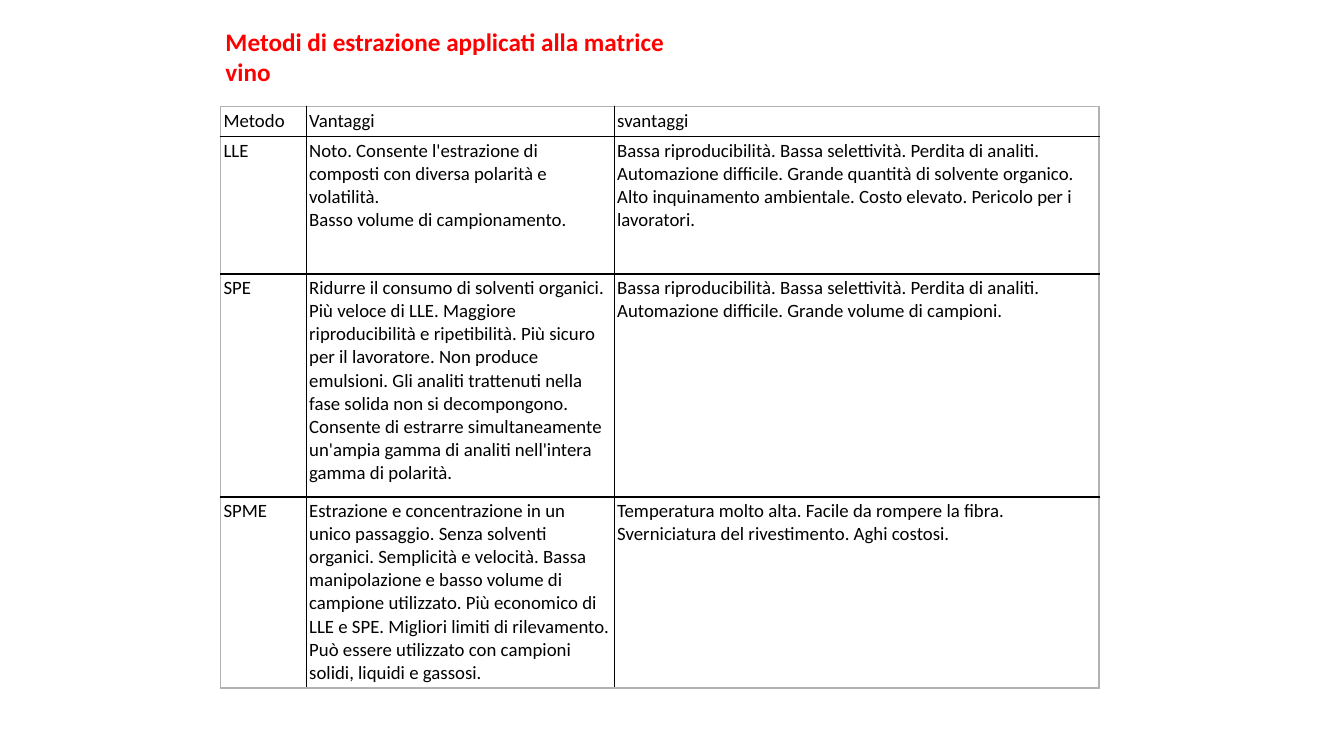
"""Build a slide comparing extraction methods for wine."""
from lxml import etree
from pptx import Presentation
from pptx.dml.color import RGBColor
from pptx.enum.text import MSO_ANCHOR
from pptx.oxml.ns import qn
from pptx.util import Pt

TITLE = "Metodi di estrazione applicati alla matrice vino"
ROWS = [
    ("Metodo", "Vantaggi", "svantaggi"),
    ("LLE",
     "Noto. Consente l'estrazione di composti con diversa polarità e volatilità.\n"
     "Basso volume di campionamento.",
     "Bassa riproducibilità. Bassa selettività. Perdita di analiti.\n"
     "Automazione difficile. Grande quantità di solvente organico. Alto inquinamento "
     "ambientale. Costo elevato. Pericolo per i lavoratori."),
    ("SPE",
     "Ridurre il consumo di solventi organici. Più veloce di LLE. Maggiore riproducibilità "
     "e ripetibilità. Più sicuro per il lavoratore. Non produce emulsioni. Gli analiti "
     "trattenuti nella fase solida non si decompongono. Consente di estrarre "
     "simultaneamente un'ampia gamma di analiti nell'intera gamma di polarità.",
     "Bassa riproducibilità. Bassa selettività. Perdita di analiti. Automazione difficile. "
     "Grande volume di campioni."),
    ("SPME",
     "Estrazione e concentrazione in un unico passaggio. Senza solventi organici. "
     "Semplicità e velocità. Bassa manipolazione e basso volume di campione utilizzato. "
     "Più economico di LLE e SPE. Migliori limiti di rilevamento. Può essere utilizzato "
     "con campioni solidi, liquidi e gassosi.",
     "Temperatura molto alta. Facile da rompere la fibra. Sverniciatura del rivestimento. "
     "Aghi costosi."),
]
COLUMN_WIDTHS = [61.2, 220, 346.3]
ROW_HEIGHTS = [21.9, 98, 159.3, 136.5]
LEFT, TITLE_TOP, TABLE_TOP = 157.5, 15.1, 75.8
CELL_INSET, TITLE_INSET = 2.16, 3.6
FONT = "Calibri"
RED = RGBColor(0xFF, 0x00, 0x00)
BLACK = RGBColor(0x00, 0x00, 0x00)
GRAY = RGBColor(0xB2, 0xB2, 0xB2)
TOP = MSO_ANCHOR.TOP


def add_text(paragraph, text, size, color, bold=False):
    """Add runs to a paragraph, with a line break between lines."""
    for index, line in enumerate(text.split("\n")):
        if index:
            paragraph.add_line_break()
        run = paragraph.add_run()
        run.text = line
        run.font.name, run.font.size, run.font.bold = FONT, Pt(size), bold
        run.font.color.rgb = color


def set_insets(target, inset):
    """Give a cell or text frame equal margins."""
    target.margin_left = target.margin_right = Pt(inset)
    target.margin_top = target.margin_bottom = Pt(inset)


def add_border(cell, side, color, width):
    """Draw one side of a cell."""
    properties = cell._tc.get_or_add_tcPr()
    line = etree.SubElement(properties, qn(f"a:ln{side}"), w=str(Pt(width)))
    fill = etree.SubElement(line, qn("a:solidFill"))
    etree.SubElement(fill, qn("a:srgbClr"), val=str(color))


def add_title(slide):
    """Add the red heading."""
    box = slide.shapes.add_textbox(Pt(LEFT), Pt(TITLE_TOP), Pt(347.8), Pt(51))
    frame = box.text_frame
    frame.word_wrap = True
    set_insets(frame, TITLE_INSET)
    add_text(frame.paragraphs[0], TITLE, 18, RED, bold=True)


def add_comparison(slide):
    """Add the table of methods."""
    last_row, last_column = len(ROWS) - 1, len(COLUMN_WIDTHS) - 1
    table = slide.shapes.add_table(
        len(ROWS), len(COLUMN_WIDTHS), Pt(LEFT), Pt(TABLE_TOP),
        Pt(sum(COLUMN_WIDTHS)), Pt(sum(ROW_HEIGHTS))).table
    table.first_row = table.horz_banding = False
    for column, width in zip(table.columns, COLUMN_WIDTHS):
        column.width = Pt(width)
    for row, height in zip(table.rows, ROW_HEIGHTS):
        row.height = Pt(height)
    for i, texts in enumerate(ROWS):
        for j, text in enumerate(texts):
            cell = table.cell(i, j)
            set_insets(cell, CELL_INSET)
            cell.vertical_anchor = TOP
            outer = {"L": j == 0, "R": j == last_column, "T": i == 0, "B": i == last_row}
            for side, is_outer in outer.items():
                add_border(cell, side, GRAY if is_outer else BLACK, 1)
            cell.fill.background()
            add_text(cell.text_frame.paragraphs[0], text, 13.4, BLACK)


def main():
    """Create and save the presentation."""
    presentation = Presentation()
    presentation.slide_width, presentation.slide_height = Pt(960), Pt(540)
    slide = presentation.slides.add_slide(presentation.slide_layouts[6])
    add_comparison(slide)
    add_title(slide)
    presentation.save("out.pptx")


if __name__ == "__main__":
    main()
